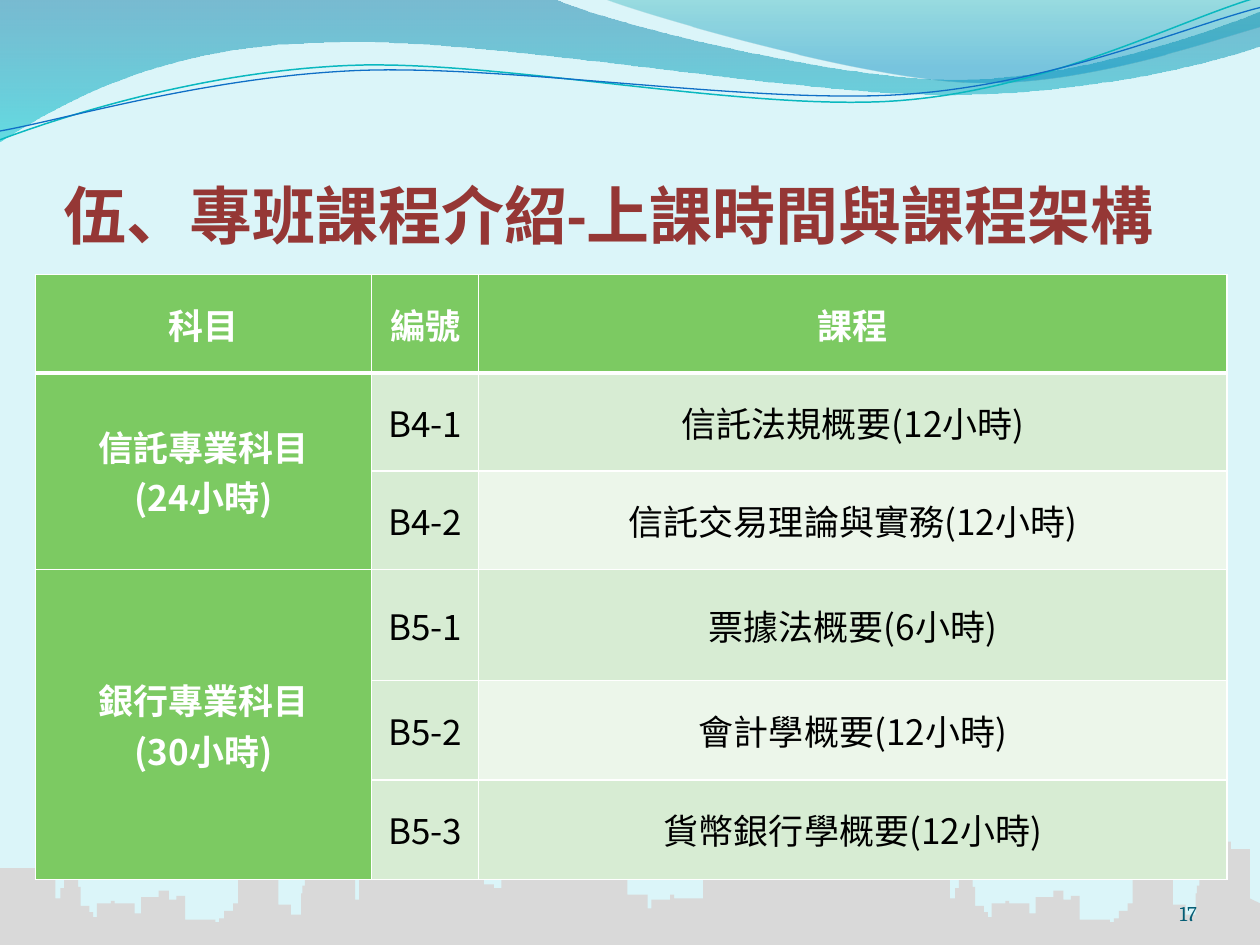
from lxml import etree
from pptx import Presentation
from pptx.dml.color import RGBColor
from pptx.enum.text import MSO_ANCHOR, PP_ALIGN
from pptx.oxml.ns import qn
from pptx.util import Inches, Pt

LEFT, CENTER, RIGHT = PP_ALIGN.LEFT, PP_ALIGN.CENTER, PP_ALIGN.RIGHT
MIDDLE, BOTTOM = MSO_ANCHOR.MIDDLE, MSO_ANCHOR.BOTTOM
CJK_FONT = "Noto Sans CJK SC"
CURVE_STEPS = 30
COLORS = {
    "background": "DBF5F9", "skyline": "D9D9D9", "white": "FFFFFF",
    "black": "000000", "title": "953735", "number": "045D75",
    "header": "7CCA62", "band_dark": "D7ECD3", "band_light": "ECF6EA",
    "wave_blue": "0074A1", "wave_teal": "00C6CF",
    "crest_teal": "00A1A9", "crest_blue": "008BBF",
    "line_teal": "0AB8BF", "line_blue": "0F6FC6",
}


def write(frame, text, size=20, font=CJK_FONT, color="black", bold=False,
          align=CENTER):
    """Fill a text frame, one paragraph for each line of text."""
    frame.word_wrap = True
    for index, line in enumerate(text.split("\n")):
        paragraph = frame.add_paragraph() if index else frame.paragraphs[0]
        paragraph.alignment = align
        run = paragraph.add_run()
        run.text = line
        run.font.size = Pt(size)
        run.font.name = font
        run.font.bold = bold
        run.font.color.rgb = RGBColor.from_string(COLORS[color])
        east_asian = etree.Element(qn("a:ea"), typeface=CJK_FONT)
        run.font._element.find(qn("a:latin")).addnext(east_asian)


def add_outline(start, segments, close=True):
    """Draw lines (x, y) and cubic curves (x1, y1, x2, y2, x, y) in inches."""
    points = [start]
    for segment in segments:
        if len(segment) == 2:
            points.append(segment)
            continue
        x0, y0 = points[-1]
        x1, y1, x2, y2, x3, y3 = segment
        for step in range(1, CURVE_STEPS + 1):
            t = step / CURVE_STEPS
            a, b, c, d = (1 - t)**3, 3 * t * (1 - t)**2, 3 * t**2 * (1 - t), t**3
            points.append((a * x0 + b * x1 + c * x2 + d * x3,
                           a * y0 + b * y1 + c * y2 + d * y3))
    scaled = [(Inches(x), Inches(y)) for x, y in points]
    builder = slide.shapes.build_freeform(*scaled[0])
    builder.add_line_segments(scaled[1:], close=close)
    shape = builder.convert_to_shape()
    shape.shadow.inherit = False
    return shape


presentation = Presentation()
presentation.slide_width = Inches(10)
presentation.slide_height = Inches(7.5)
slide = presentation.slides.add_slide(presentation.slide_layouts[6])
slide.background.fill.solid()
slide.background.fill.fore_color.rgb = RGBColor.from_string(COLORS["background"])

# Translucent waves: start, segments, gradient stops (position, color, opacity)
waves = [
    ((0, -0.01),
     [(4.4, -0.01), (4.76, 0.17, 6.64, 0.63, 7.58, 0.63),
      (8.53, 0.63, 9.58, 0.26, 10, 0.09), (10.01, 0.36),
      (9.83, 0.44, 8.7, 0.76, 7.46, 0.75), (6.22, 0.75, 3.82, 0.28, 2.57, 0.34),
      (1.29, 0.35, 0.46, 0.83, -0.01, 1.13)],
     [(0, "wave_blue", 45), (1, "wave_teal", 55)]),
    ((4.79, -0.01),
     [(5.09, 0.11, 6.82, 0.62, 7.69, 0.65), (8.56, 0.69, 9.61, 0.32, 10, 0.21),
      (10, 0)],
     [(0, "crest_teal", 30), (0.8, "crest_blue", 45)]),
]
for start, segments, stops in waves:
    wave = add_outline(start, segments)
    wave.line.fill.background()
    wave.fill.gradient()
    wave.fill.gradient_angle = 270
    for stop, (position, color, opacity) in zip(wave.fill.gradient_stops, stops):
        stop.position = position
        stop.color.rgb = RGBColor.from_string(COLORS[color])
    for element, (_, _, opacity) in zip(wave.element.iter(qn("a:srgbClr")), stops):
        etree.SubElement(element, qn("a:alpha"), val=str(opacity * 1000))

# Thin lines along the waves
wave_lines = [
    ((0, 1.11),
     [(0.48, 0.93, 1.58, 0.57, 2.77, 0.52), (3.95, 0.47, 5.93, 0.89, 7.13, 0.8),
      (8.33, 0.71, 9.38, 0.15, 9.98, -0.02)], "line_teal", 0.85),
    ((0, 1.04),
     [(0.47, 0.96, 1.64, 0.61, 2.83, 0.56), (4.03, 0.51, 5.97, 0.83, 7.17, 0.75),
      (8.36, 0.67, 9.41, 0.21, 10, 0.06)], "line_blue", 0.75),
]
for start, segments, color, width in wave_lines:
    curve = add_outline(start, segments, close=False)
    curve.fill.background()
    curve.line.color.rgb = RGBColor.from_string(COLORS[color])
    curve.line.width = Pt(width)

# Skyline: roofs as (right edge, height) from right to left; one block shows twice
city_block = [
    (2.82, 6.74), (2.67, 6.68), (2.61, 6.63), (2.52, 6.6), (2.46, 6.76),
    (2.45, 6.93), (2.42, 7.03), (2.4, 7.09), (2.39, 7.26), (2.31, 7.18),
    (2.21, 6.81), (2.13, 6.75), (1.97, 6.91), (1.89, 7.17), (1.85, 7.23),
    (1.78, 7.29), (1.74, 7.32), (1.71, 7.3), (1.47, 7.11), (1.4, 7.14),
    (1.34, 7.07), (1.26, 7.12), (1.12, 7.25), (1.07, 7.17), (0.91, 7.15),
    (0.88, 7.17), (0.77, 7.28), (0.74, 7.24), (0.71, 7.19), (0.64, 7.04),
    (0.62, 6.97), (0.51, 7.05), (0.48, 7.13), (0.44, 6.89),
]
downtown = [
    (7.11, 6.95), (7.05, 6.53), (7.02, 6.48), (6.86, 6.53), (6.82, 6.9),
    (6.75, 6.87), (6.44, 6.84), (6.37, 6.15), (5.9, 6.87), (5.58, 7.13),
    (5.35, 7.1), (5.32, 7.14), (5.17, 7.21), (5.14, 7.1), (4.98, 6.21),
    (4.94, 6.1), (4.7, 6.03), (4.62, 6.06), (4.47, 6.17), (4.46, 6.98),
    (4.34, 6.79), (4.29, 6.52), (4.09, 6.62), (4.08, 6.79), (4.03, 6.8),
    (3.98, 7.05), (3.92, 7.02), (3.84, 6.93), (3.44, 6.71), (3.2, 6.68),
    (3.03, 6.92), (2.85, 7.14),
]
roofs = [(x + 7.1, y) for x, y in city_block] + downtown + city_block
skyline_points = [(10, 7.17), (9.92, 7.13)]
for (right, height), (left, _) in zip(roofs, roofs[1:] + [(0, 7.5)]):
    skyline_points += [(right, height), (left, height)]
skyline = add_outline((10, 7.5), skyline_points + [(0, 7.5)])
skyline.fill.solid()
skyline.fill.fore_color.rgb = RGBColor.from_string(COLORS["skyline"])
skyline.line.fill.background()

# Title and slide number
text_boxes = [
    ("伍、專班課程介紹-上課時間與課程架構", (0.5, 1, 8.91, 1), 0.05,
     dict(size=36, font="Calibri", color="title", bold=True, align=LEFT)),
    ("17", (8.67, 6.95, 0.83, 0.4), 0,
     dict(size=12, font="Cambria", color="number", align=RIGHT)),
]
for text, box, top_margin, text_format in text_boxes:
    frame = slide.shapes.add_textbox(*map(Inches, box)).text_frame
    frame.margin_left = frame.margin_right = frame.margin_bottom = 0
    frame.margin_top = Inches(top_margin)
    frame.vertical_anchor = BOTTOM
    write(frame, text, **text_format)

# Course table
rows = [
    ("科目", "編號", "課程"),
    ("信託專業科目\n(24小時)", "B4-1", "信託法規概要(12小時)"),
    ("", "B4-2", "信託交易理論與實務(12小時)"),
    ("銀行專業科目\n(30小時)", "B5-1", "票據法概要(6小時)"),
    ("", "B5-2", "會計學概要(12小時)"),
    ("", "B5-3", "貨幣銀行學概要(12小時)"),
]
column_widths = [2.67, 0.85, 5.94]
row_heights = [0.78, 0.78, 0.78, 0.88, 0.79, 0.79]
table = slide.shapes.add_table(
    len(rows), len(column_widths), Inches(0.28), Inches(2.18),
    Inches(sum(column_widths)), Inches(sum(row_heights))).table
for column, width in zip(table.columns, column_widths):
    column.width = Inches(width)
for table_row, height in zip(table.rows, row_heights):
    table_row.height = Inches(height)
for first, last in [(1, 2), (3, 5)]:
    table.cell(first, 0).merge(table.cell(last, 0))

for row, texts in enumerate(rows):
    for column, text in enumerate(texts):
        cell = table.cell(row, column)
        cell.vertical_anchor = MIDDLE
        cell.margin_left = cell.margin_right = Inches(0.07)
        cell.margin_top = cell.margin_bottom = 0
        is_header = row == 0 or column == 0
        if text:
            write(cell.text_frame, text, bold=is_header,
                  color="white" if is_header else "black")
        # White borders, thicker under the header row
        properties = cell._tc.get_or_add_tcPr()
        for side in ("lnL", "lnR", "lnT", "lnB"):
            thick = (row, side) in [(0, "lnB"), (1, "lnT")]
            border = etree.SubElement(properties, qn(f"a:{side}"),
                                      w=str(Pt(3 if thick else 1)))
            border_fill = etree.SubElement(border, qn("a:solidFill"))
            etree.SubElement(border_fill, qn("a:srgbClr"), val=COLORS["white"])
        light = column == 2 and row % 2 == 0
        shade = "header" if is_header else "band_light" if light else "band_dark"
        cell.fill.solid()
        cell.fill.fore_color.rgb = RGBColor.from_string(COLORS[shade])

presentation.save("out.pptx")
